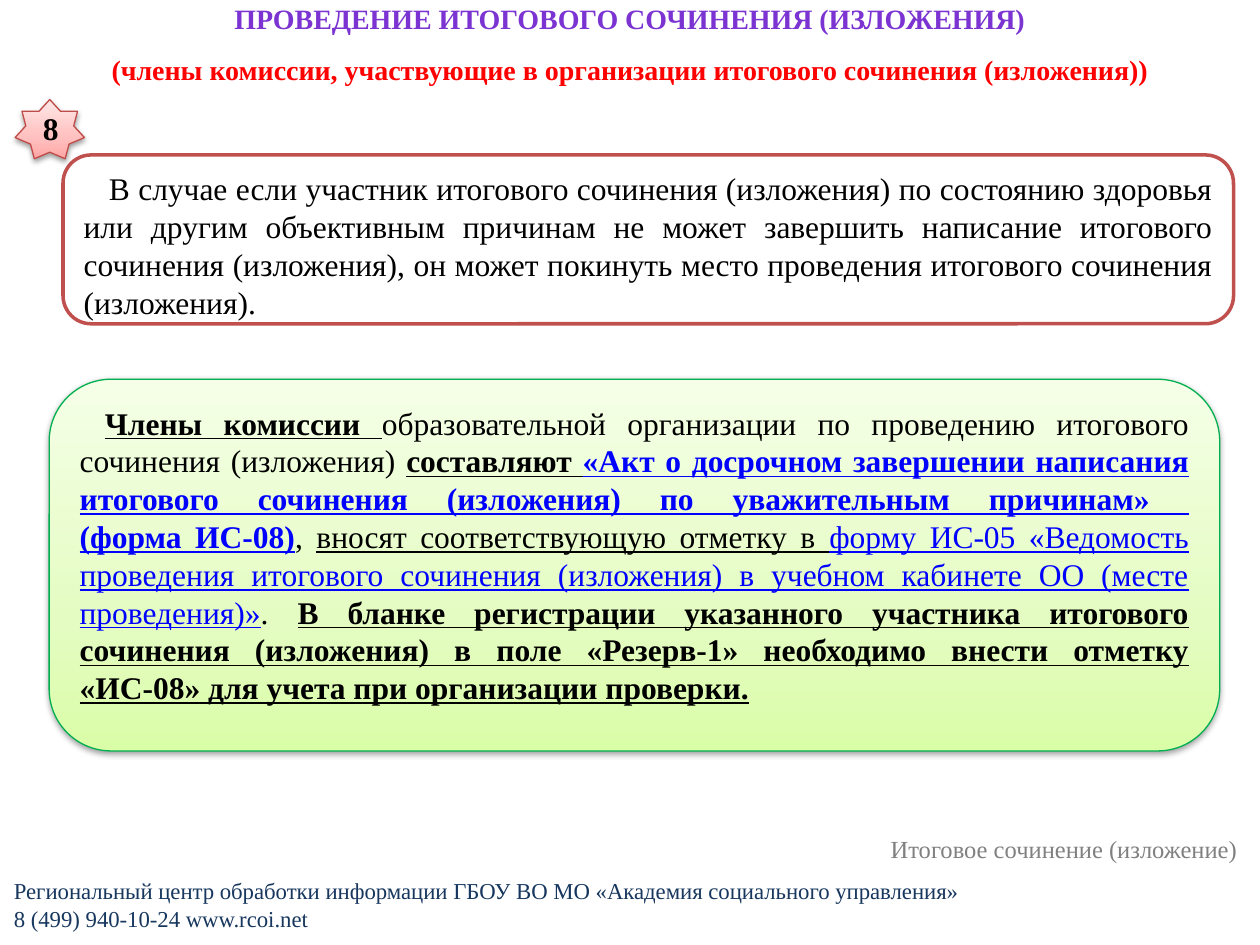
from copy import deepcopy
from pptx import Presentation
from pptx.dml.color import RGBColor
from pptx.enum.shapes import MSO_SHAPE
from pptx.enum.text import MSO_ANCHOR, PP_ALIGN
from pptx.oxml import parse_xml
from pptx.oxml.ns import nsdecls
from pptx.util import Inches, Pt

FONT = "Times New Roman"
BLACK, BLUE, RED = "000000", "0000FF", "FF0000"
BOLD = {"bold": True}
UNDERLINED = {"underline": True}
KEY = BOLD | UNDERLINED

PURPLE = [(0, "3D1B67"), (43, "7B34D2"), (48, "7330C4"), (100, "3D1B67")]
PINK = [(0, "FFA6A5"), (35, "FFC0BF"), (100, "FFE7E7")]
GREEN = [(0, "DAFDA7"), (35, "E4FCC2"), (100, "F5FFE7")]

HEADING = [
    ("ПРОВЕДЕНИЕ ИТОГОВОГО СОЧИНЕНИЯ (ИЗЛОЖЕНИЯ)\n", "7B34D2", BOLD),
    ("(члены комиссии, участвующие в организации итогового сочинения (изложения))", RED, BOLD),
]
CONDITION = [
    ("В случае если участник итогового сочинения (изложения) по состоянию здоровья или другим "
     "объективным причинам не может завершить написание итогового сочинения (изложения), он может "
     "покинуть место проведения итогового сочинения (изложения).", BLACK, {}),
]
ACTIONS = [
    ("Члены комиссии ", BLACK, KEY),
    ("образовательной организации по проведению итогового сочинения (изложения) ", BLACK, {}),
    ("составляют ", BLACK, KEY),
    ("«Акт о досрочном завершении написания итогового сочинения (изложения) "
     "по уважительным причинам» \n(форма ИС-08)", BLUE, KEY),
    (", ", BLACK, {}),
    ("вносят соответствующую отметку в ", BLACK, UNDERLINED),
    ("форму ИС-05 «Ведомость проведения итогового сочинения (изложения) "
     "в учебном кабинете ОО (месте проведения)»", BLUE, UNDERLINED),
    (". ", BLACK, {}),
    ("В бланке регистрации указанного участника итогового сочинения (изложения) в поле «Резерв-1» "
     "необходимо внести отметку «ИС-08» для учета при организации проверки.", BLACK, KEY),
]
STEP = [("8", BLACK, BOLD)]
CENTER = [
    ("Региональный центр обработки информации ГБОУ ВО МО «Академия социального управления» \n"
     "8 (499) 940-10-24 www.rcoi.net", "17375E", {}),
]
TOPIC = [("Итоговое сочинение (изложение)", "808080", {})]


def rgb(value):
    return RGBColor.from_string(value)


def gradient(stops, angle):
    marks = "".join(
        f'<a:gs pos="{pos * 1000}"><a:srgbClr val="{color}"/></a:gs>' for pos, color in stops)
    return parse_xml(f'<a:gradFill {nsdecls("a")} rotWithShape="1"><a:gsLst>{marks}</a:gsLst>'
                     f'<a:lin ang="{angle * 60000}" scaled="0"/></a:gradFill>')


def write(frame, pieces, size, align=PP_ALIGN.LEFT, anchor=MSO_ANCHOR.TOP, wrap=True):
    frame.word_wrap = wrap
    frame.vertical_anchor = anchor
    paragraph = frame.paragraphs[0]
    paragraph.alignment = align
    for words, color, formats in pieces:
        for index, line in enumerate(words.split("\n")):
            if index:
                paragraph.add_line_break()
                paragraph._p[-1].append(deepcopy(run._r.rPr))
            if not line:
                continue
            run = paragraph.add_run()
            run.text = line
            values = {"name": FONT, "size": Pt(size), "bold": False, "underline": False} | formats
            for key, value in values.items():
                setattr(run.font, key, value)
            run.font.color.rgb = rgb(color)
    return paragraph


def indent_first_line(paragraph):
    paragraph.level = 2
    properties = paragraph._p.get_or_add_pPr()
    properties.set("marL", "0")
    properties.set("indent", str(Inches(0.2)))


def add_panel(kind, place, line_color, line_width, stops=None):
    panel = slide.shapes.add_shape(kind, *map(Inches, place))
    panel.shadow.inherit = False
    panel.fill.solid()
    panel.fill.fore_color.rgb = rgb("FFFFFF")
    panel.line.color.rgb = rgb(line_color)
    panel.line.width = Pt(line_width)
    if stops:
        properties = panel._element.spPr
        properties.replace(properties.find("{*}solidFill"), gradient(stops, 270))
        properties.find("{*}effectLst").append(parse_xml(
            f'<a:outerShdw {nsdecls("a")} blurRad="{Pt(3.1)}" dist="{Pt(1.6)}" dir="5400000" '
            'rotWithShape="0"><a:srgbClr val="000000"><a:alpha val="38000"/></a:srgbClr>'
            '</a:outerShdw>'))
    return panel.text_frame


deck = Presentation()
deck.slide_width, deck.slide_height = Inches(10), Inches(7.5)
slide = deck.slides.add_slide(deck.slide_layouts[5])

center = slide.shapes.add_textbox(*map(Inches, (0, 6.9, 8.61, 0.55))).text_frame
for side, gap in {"left": 0.11, "top": 0.06, "right": 0.11, "bottom": 0.06}.items():
    setattr(center, f"margin_{side}", Inches(gap))
write(center, CENTER, 13)
topic = slide.shapes.add_textbox(*map(Inches, (6.97, 6.57, 2.99, 0.34))).text_frame
write(topic, TOPIC, 14, wrap=False)

title = slide.shapes.title
for side, length in {"left": 0.5, "top": -0.07, "width": 9, "height": 0.7}.items():
    setattr(title, side, Inches(length))
heading = write(title.text_frame, HEADING, 16, PP_ALIGN.CENTER, MSO_ANCHOR.MIDDLE)
heading.line_spacing = 1.5
lettering = heading.runs[0]._r.rPr
lettering.replace(lettering.find("{*}solidFill"), gradient(PURPLE, 90))
lettering.insert(0, parse_xml(
    f'<a:ln {nsdecls("a")} w="{Pt(0.71)}"><a:solidFill><a:srgbClr val="5E457C"/></a:solidFill></a:ln>'))

condition = add_panel(MSO_SHAPE.ROUNDED_RECTANGLE, (0.5, 1.23, 9.29, 1.34), "C0504D", 2)
indent_first_line(write(condition, CONDITION, 18, PP_ALIGN.JUSTIFY))
step = add_panel(MSO_SHAPE.STAR_7_POINT, (0.12, 0.79, 0.55, 0.47), "BF4C48", 0.75, PINK)
write(step, STEP, 18, PP_ALIGN.CENTER, MSO_ANCHOR.MIDDLE)
actions = add_panel(MSO_SHAPE.ROUNDED_RECTANGLE, (0.39, 3.01, 9.29, 2.95), "00B050", 0.75, GREEN)
indent_first_line(write(actions, ACTIONS, 18, PP_ALIGN.JUSTIFY))

deck.save("out.pptx")
